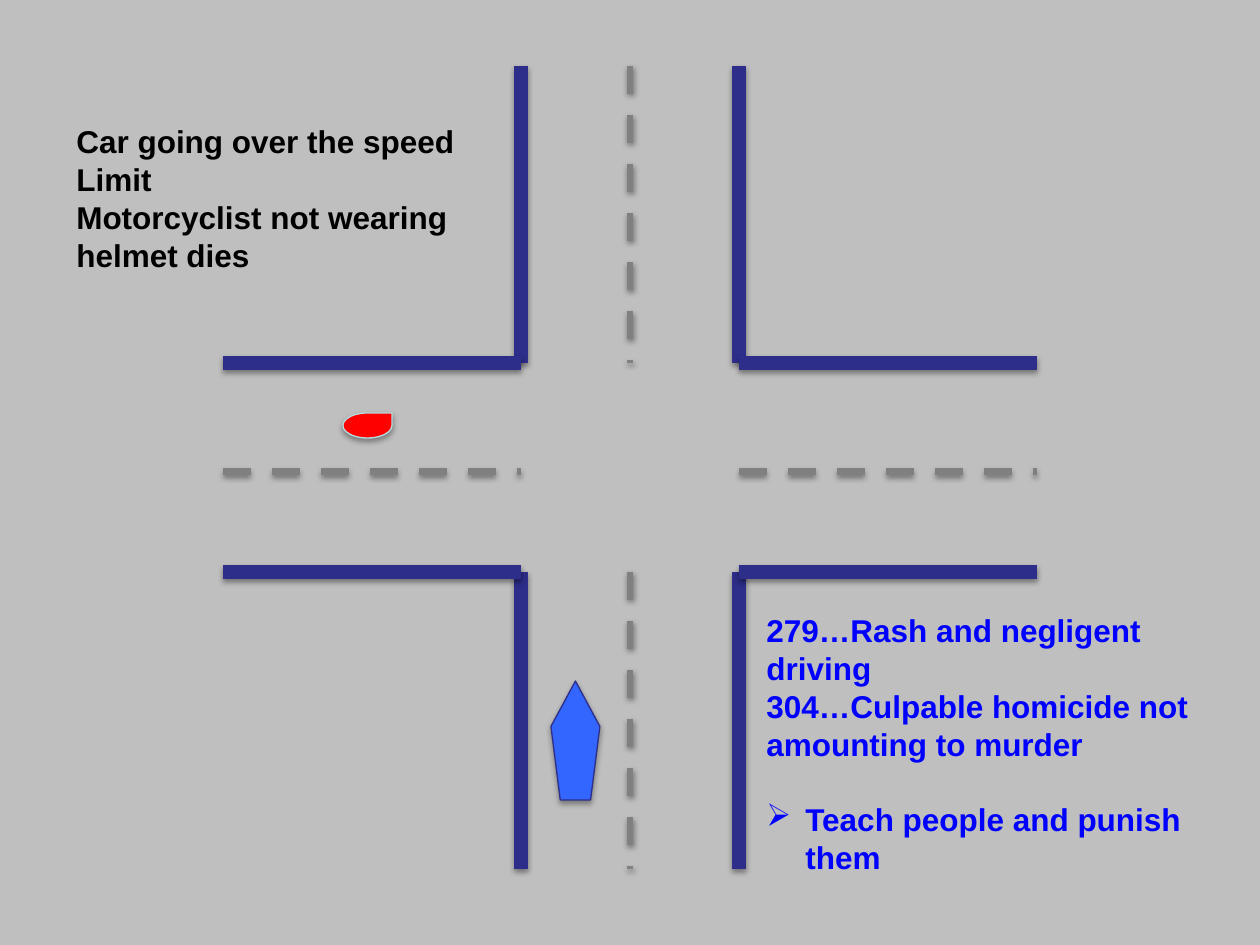
from lxml.etree import SubElement
from pptx import Presentation
from pptx.dml.color import RGBColor
from pptx.enum.dml import MSO_LINE
from pptx.enum.shapes import MSO_CONNECTOR, MSO_SHAPE
from pptx.enum.text import MSO_AUTO_SIZE
from pptx.oxml.ns import qn
from pptx.util import Emu, Pt

LINE_HEIGHT = Pt(21.6)


def px(length):
    return Emu(round(length * 914400 / 126))


def rgb(value):
    return RGBColor.from_string(value)


class RoadSlide:
    """Draws a road scene with soft shadows and bold captions on one slide."""

    def __init__(self, slide, background):
        self.shapes = slide.shapes
        slide.background.fill.solid()
        slide.background.fill.fore_color.rgb = rgb(background)
        self.roads = self.shapes.add_group_shape().shapes

    def shadow(self, item, distance, opacity):
        effects = SubElement(item._element.spPr, qn("a:effectLst"))
        outer = SubElement(effects, qn("a:outerShdw"), blurRad="40000", dist=str(distance),
                           dir="5400000", rotWithShape="0")
        black = SubElement(outer, qn("a:srgbClr"), val="000000")
        SubElement(black, qn("a:alpha"), val=str(opacity * 1000))

    def road_line(self, x1, y1, x2, y2, color, width, dash=None):
        road = self.roads.add_connector(MSO_CONNECTOR.STRAIGHT, px(x1), px(y1), px(x2), px(y2))
        road.line.color.rgb = rgb(color)
        road.line.width = Pt(width)
        if dash:
            road.line.dash_style = dash
        self.shadow(road, 20000, 38)

    def vehicle(self, outline, x, y, width, height, fill, border):
        vehicle = self.shapes.add_shape(outline, px(x), px(y), px(width), px(height))
        vehicle.fill.solid()
        vehicle.fill.fore_color.rgb = rgb(fill)
        vehicle.line.color.rgb = rgb(border)
        vehicle.line.width = Pt(0.75)
        self.shadow(vehicle, 23000, 35)

    def caption(self, x, y, width, height, color, lines, bullet=None):
        frame = self.shapes.add_textbox(px(x), px(y), px(width), px(height)).text_frame
        frame.word_wrap = True
        frame.auto_size = MSO_AUTO_SIZE.SHAPE_TO_FIT_TEXT
        frame.text = "\n".join(lines + ([bullet] if bullet else []))
        if bullet:
            self.bullet(frame.paragraphs[-1])
        for paragraph in frame.paragraphs:
            paragraph.line_spacing = LINE_HEIGHT
            paragraph.font.name = "Arial"
            paragraph.font.size = Pt(18)
            paragraph.font.bold = True
            paragraph.font.color.rgb = rgb(color)

    def bullet(self, paragraph):
        paragraph.space_before = LINE_HEIGHT
        properties = paragraph._p.get_or_add_pPr()
        properties.set("marL", str(px(39)))
        properties.set("indent", str(-px(39)))
        SubElement(properties, qn("a:buChar"), char="➢")


def main():
    deck = Presentation()
    deck.slide_width, deck.slide_height = px(1260), px(945)
    scene = RoadSlide(deck.slides.add_slide(deck.slide_layouts[6]), "BFBFBF")

    west, east = (223, 521), (739, 1037)
    north, south = (66, 363), (572, 869)
    kerb, lane = ("2D2D8A", 8), ("808080", 4, MSO_LINE.DASH)
    for top, bottom in (north, south):
        for x in (east[0], west[1]):
            scene.road_line(x, top, x, bottom, *kerb)
    for y in (north[1], south[0]):
        for left, right in (west, east):
            scene.road_line(left, y, right, y, *kerb)
    for top, bottom in (north, south):
        scene.road_line(630, top, 630, bottom, *lane)
    for left, right in (west, east):
        scene.road_line(left, 472, right, 472, *lane)

    scene.vehicle(MSO_SHAPE.REGULAR_PENTAGON, 551, 681, 49, 119, "3366FF", "2D2D8A")
    scene.vehicle(MSO_SHAPE.TEAR, 343, 413, 49, 25, "FF0000", "B6DCDF")
    scene.caption(754, 605, 491, 280, "0000FF",
                  ["279…Rash and negligent driving",
                   "304…Culpable homicide not amounting to murder"],
                  "Teach people and punish them")
    scene.caption(64, 116, 491, 165, "000000",
                  ["Car going over the speed", "Limit",
                   "Motorcyclist not wearing helmet dies"])
    deck.save("out.pptx")


if __name__ == "__main__":
    main()
